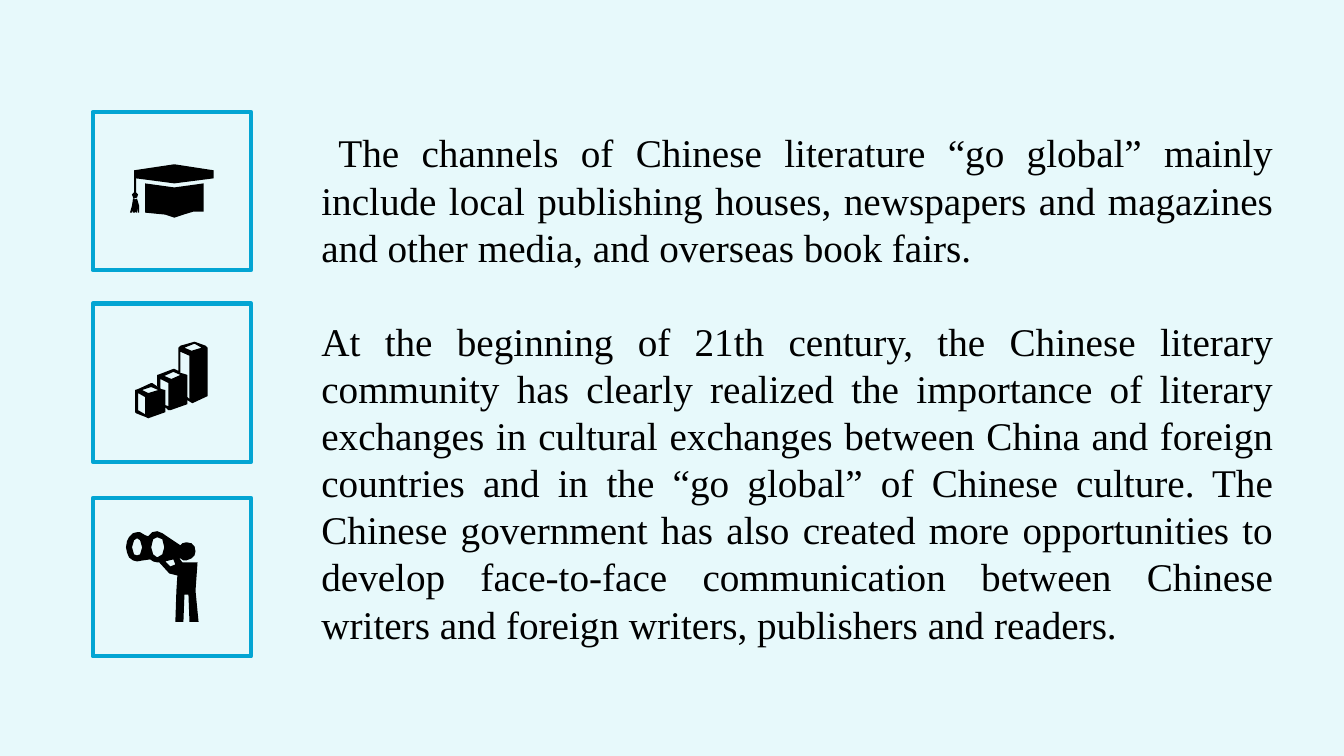
from pptx import Presentation
from pptx.dml.color import RGBColor
from pptx.enum.shapes import MSO_SHAPE as Shape
from pptx.enum.text import MSO_ANCHOR as Anchor, PP_ALIGN as Align
from pptx.util import Cm, Pt

PALE = RGBColor(0xE7, 0xF9, 0xFB)
BLUE = RGBColor(0x03, 0xA5, 0xD3)
BLACK = RGBColor(0, 0, 0)

CHANNELS = (
    "The channels of Chinese literature “go global” mainly include local publishing houses, "
    "newspapers and magazines and other media, and overseas book fairs."
)
CENTURY = (
    "At the beginning of 21th century, the Chinese literary community has clearly realized "
    "the importance of literary exchanges in cultural exchanges between China and foreign "
    "countries and in the “go global” of Chinese culture. The Chinese government has also "
    "created more opportunities to develop face-to-face communication between Chinese "
    "writers and foreign writers, publishers and readers."
)

GRADUATION_CAP = [
    [(144, 211), (154, 211.5), (164, 213), (173, 216), (182, 213), (192, 210.5),
     (202, 210), (202, 182), (173, 186), (144, 182)],
    [(212, 169), (212, 177), (173, 182), (135, 177), (135, 191), (136.5, 192),
     (137, 193), (136, 196), (133, 197), (131.5, 196), (131, 193), (131.5, 192),
     (133, 191), (133, 169), (173, 163)],
    [(136, 197), (134, 198), (132, 197), (131, 204), (129, 211), (131, 211),
     (132, 209), (132, 211), (134, 211), (135, 210), (135, 211), (136, 211),
     (136, 205), (137, 211), (138, 211), (137.5, 204)],
]
BAR_BLOCKS = [
    [(183, 345), (190, 348), (200, 345), (193, 341)],
    [(144, 394), (137, 390), (137, 407), (144, 411)],
    [(163, 373), (170, 376), (179, 372), (172, 369)],
    [(156, 372), (159, 371), (172, 366), (173, 366), (177, 368), (177, 345),
     (179, 343), (193, 339), (204, 343), (206, 345), (206, 393), (191, 400),
     (189, 399), (186, 397), (186, 401), (169, 407), (167, 407), (164, 404),
     (164, 409), (147, 415), (145, 414), (135, 410), (134, 409), (134, 387),
     (137, 386), (150, 380), (151, 380), (160, 386), (164, 387), (164, 402),
     (167, 403), (167, 380), (159, 376), (159, 385), (156, 384)],
    [(179, 370), (183, 371), (186, 372), (186, 394), (188, 396), (188, 353), (179, 349)],
    [(141, 387), (147, 390), (157, 387), (150, 384)],
]
LOOKOUT = [
    [(156, 527), (151, 528), (147, 532), (144, 531), (139, 528.5), (136, 528),
     (132, 529), (128, 533), (126, 537), (125, 543), (126, 548), (128, 553),
     (132, 556), (136, 557), (142, 556.5), (149, 555), (152, 557), (156, 558),
     (158, 558), (168, 569), (176, 571), (175, 586), (174, 617), (182, 617),
     (183, 590), (187, 590), (188, 617), (197, 617), (194, 586), (196, 558),
     (181, 558), (178, 554), (179, 554), (182, 555.5), (185, 556), (190, 554.5),
     (193, 551), (194, 547), (193, 542), (190, 539), (185, 538), (181, 539),
     (179, 541), (161, 529)],
    [(174, 560), (169, 562), (164, 557), (172, 555)],
    [(133, 536), (136, 534), (139, 536), (141, 543), (139, 550), (136, 551),
     (133, 550), (131, 543)],
    [(152, 535), (156, 533), (161, 535), (163, 543), (161, 550), (156, 553),
     (152, 550), (150, 543)],
]
TILES = [(2.82, GRADUATION_CAP), (12.55, LOOKOUT), (7.65, BAR_BLOCKS)]
TILE_LEFT, TILE_SIDE = Cm(2.34), Cm(3.99)
ICON_UNIT = Cm(2.54) / 100


def draw_icon(tile, outlines):
    builder = None
    for start, *rest in outlines:
        if builder is None:
            builder = tile.shapes.build_freeform(*start, scale=ICON_UNIT)
        else:
            builder.move_to(*start)
        builder.add_line_segments(rest, close=True)
    icon = builder.convert_to_shape()
    icon.shadow.inherit = False
    icon.fill.solid()
    icon.fill.fore_color.rgb = BLACK
    icon.line.fill.background()


deck = Presentation()
deck.slide_width, deck.slide_height = Cm(33.87), Cm(19.05)
slide = deck.slides.add_slide(deck.slide_layouts[6])

backdrop = slide.shapes.add_shape(Shape.RECTANGLE, 0, 0, deck.slide_width, deck.slide_height)
backdrop.shadow.inherit = False
backdrop.fill.solid()
backdrop.fill.fore_color.rgb = PALE
backdrop.line.fill.background()

for top, outlines in TILES:
    tile = slide.shapes.add_group_shape()
    frame = tile.shapes.add_shape(Shape.RECTANGLE, TILE_LEFT, Cm(top), TILE_SIDE, TILE_SIDE)
    frame.shadow.inherit = False
    frame.fill.background()
    frame.line.color.rgb = BLUE
    frame.line.width = Pt(3)
    draw_icon(tile, outlines)

story = slide.shapes.add_textbox(Cm(7.85), Cm(3.12), Cm(24.49), Cm(13.41)).text_frame
story.word_wrap = True
story.vertical_anchor = Anchor.TOP
story.text = f"{CHANNELS}\n{CENTURY}"
for paragraph in story.paragraphs:
    paragraph.alignment = Align.JUSTIFY
    paragraph.line_spacing = Pt(33.65)
    for run in paragraph.runs:
        run.font.name = "Times New Roman"
        run.font.size = Pt(28)
        run.font.color.rgb = BLACK
channels, century = story.paragraphs
channels._p.get_or_add_pPr().set("indent", str(Cm(0.43)))
century.space_before = Pt(33.65)

deck.save("out.pptx")
